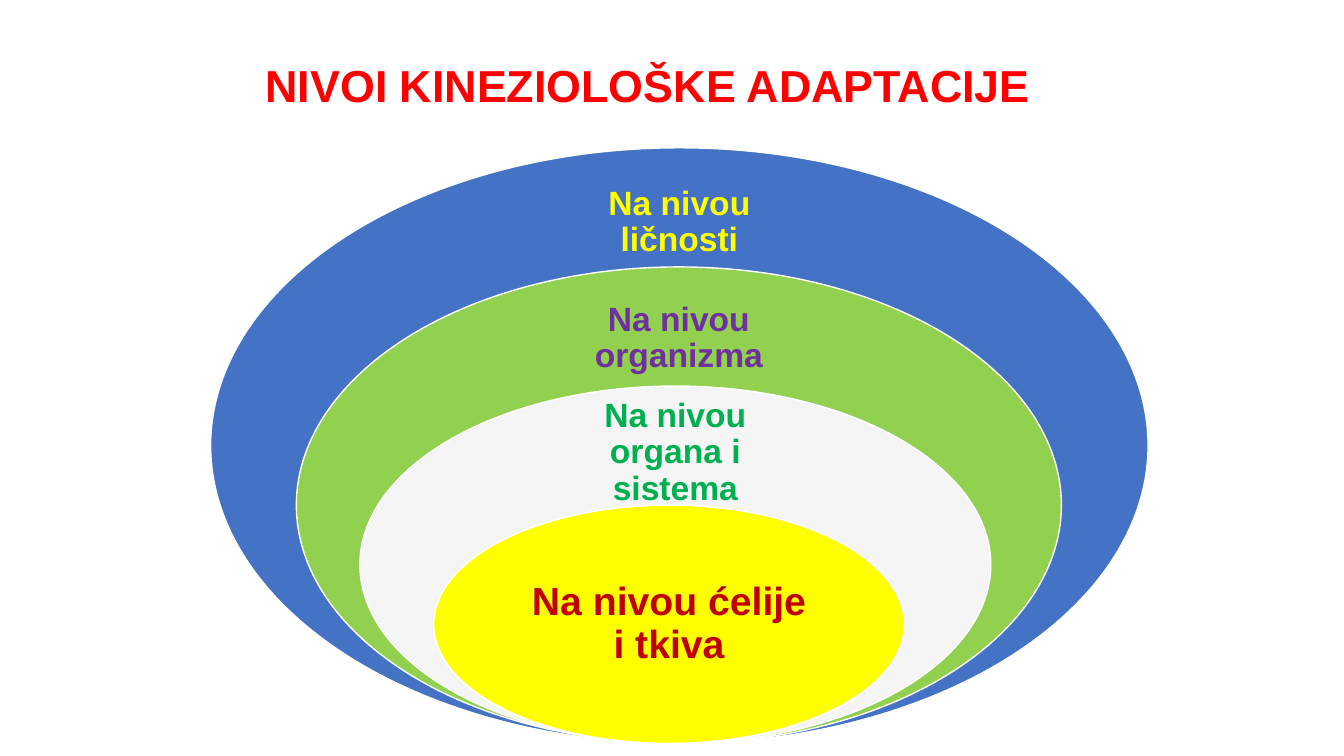
from pptx import Presentation
from pptx.dml.color import RGBColor
from pptx.enum.shapes import MSO_SHAPE
from pptx.enum.text import MSO_ANCHOR, MSO_AUTO_SIZE, PP_ALIGN
from pptx.util import Pt

OVAL = MSO_SHAPE.OVAL
MIDDLE = MSO_ANCHOR.MIDDLE
CENTER = PP_ALIGN.CENTER
NO_FIT = MSO_AUTO_SIZE.NONE

TITLE = "NIVOI KINEZIOLOŠKE ADAPTACIJE"

# Outermost level first; "drop" and "tall" are shares of the oval's height
LEVELS = [
    {"text": "Na nivou ličnosti", "mid": 485.3, "width": 669.6,
     "label": 187.2, "drop": 0.05, "tall": 0.15, "inset": 13.7,
     "size": "level", "fill": "blue", "ink": "yellow"},
    {"text": "Na nivou organizma", "mid": 484.9, "width": 546.5,
     "label": 190.8, "drop": 0.06, "tall": 0.18, "inset": 13.7,
     "size": "level", "fill": "lime", "ink": "purple"},
    {"text": "Na nivou organa i sistema", "mid": 482.4, "width": 450.7,
     "label": 210.2, "drop": 0.075, "tall": 0.225, "inset": 13.7,
     "size": "level", "fill": "pale", "ink": "green"},
    {"text": "Na nivou ćelije i tkiva", "mid": 477.9, "width": 336.2,
     "label": 237.6, "drop": 0.25, "tall": 0.5, "inset": 15.8,
     "size": "core", "fill": "yellow", "ink": "crimson"},
]

THEME = {
    "font": "Arial",
    "size": {"title": 32, "level": 24, "core": 28},
    "color": {"red": "FF0000", "blue": "4472C4", "lime": "92D050",
              "pale": "F5F5F5", "yellow": "FFFF00", "purple": "7030A0",
              "green": "00B050", "crimson": "C00000", "white": "FFFFFF"},
}

BOTTOM = 531
HEIGHT = 425.4
SHRINK = 0.2


def color(name):
    return RGBColor.from_string(THEME["color"][name])


def assign(target, values):
    for name, value in values.items():
        setattr(target, name, value)


def write(shape, text, size, ink, inset):
    frame = shape.text_frame
    assign(frame, {"word_wrap": True, "auto_size": NO_FIT,
                   "vertical_anchor": MIDDLE})
    assign(frame, {f"margin_{side}": Pt(inset)
                   for side in ("left", "top", "right", "bottom")})
    para = frame.paragraphs[0]
    assign(para, {"alignment": CENTER, "line_spacing": 0.9})
    run = para.add_run()
    run.text = text
    assign(run.font, {"name": THEME["font"], "bold": True,
                      "size": Pt(THEME["size"][size])})
    run.font.color.rgb = color(ink)


def add_level(slide, index, level):
    """Draw one oval resting on the common bottom, with its label."""
    height = HEIGHT * (1 - SHRINK * index)
    top = BOTTOM - height
    oval = slide.shapes.add_shape(
        OVAL, Pt(level["mid"] - level["width"] / 2), Pt(top),
        Pt(level["width"]), Pt(height))
    oval.shadow.inherit = False
    oval.fill.solid()
    oval.fill.fore_color.rgb = color(level["fill"])
    oval.line.color.rgb = color("white")
    oval.line.width = Pt(1)

    label = slide.shapes.add_textbox(
        Pt(level["mid"] - level["label"] / 2),
        Pt(top + level["drop"] * height),
        Pt(level["label"]), Pt(level["tall"] * height))
    write(label, level["text"], level["size"], level["ink"], level["inset"])


def main():
    deck = Presentation()
    assign(deck, {"slide_width": Pt(960), "slide_height": Pt(540)})
    slide = deck.slides.add_slide(deck.slide_layouts[5])
    title = slide.shapes.title
    assign(title, {"left": Pt(157), "top": Pt(31.7),
                   "width": Pt(612), "height": Pt(62.6)})
    write(title, TITLE, "title", "red", 3.6)
    for index, level in enumerate(LEVELS):
        add_level(slide, index, level)
    deck.save("out.pptx")


if __name__ == "__main__":
    main()
